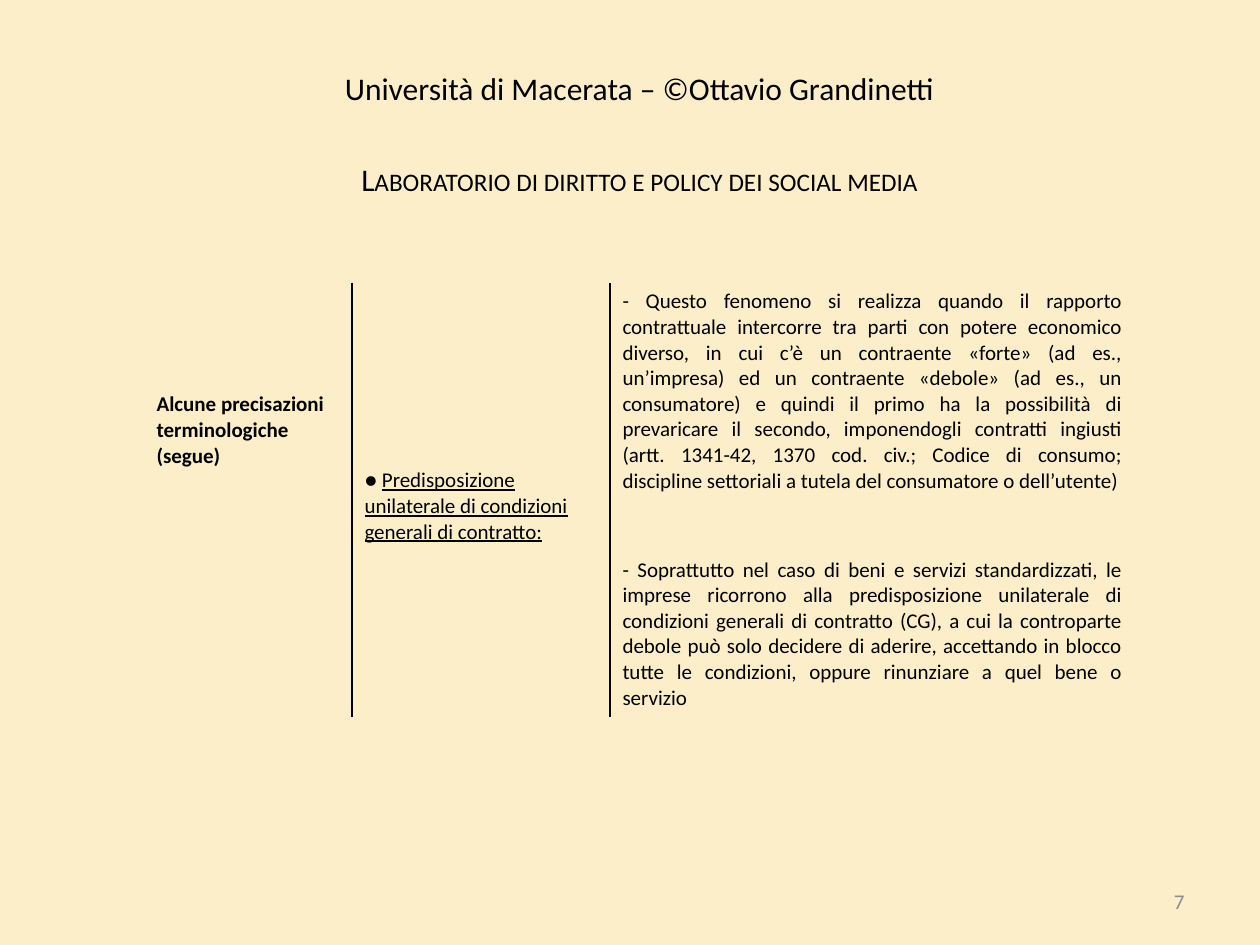
from lxml import etree
from pptx import Presentation
from pptx.dml.color import RGBColor
from pptx.enum.text import MSO_ANCHOR, PP_ALIGN
from pptx.oxml.ns import qn
from pptx.util import Emu, Pt

LEFT, MID, RIGHT, JUST = (PP_ALIGN.LEFT, PP_ALIGN.CENTER,
                          PP_ALIGN.RIGHT, PP_ALIGN.JUSTIFY)
PX = 914400 // 126
FONT = "Calibri"
COLORS = {"back": "FBEEC9", "text": "000000", "number": "8C8C8C"}
NO_STYLE = "{2D5ABB26-0587-4C30-8999-92F81FD0307C}"

ORIGIN = (144, 65)
COLS = [208, 258, 525]
ROWS = [52, 166, 217, 51, 166]
MERGES = [((0, 0), (0, 2)), ((1, 0), (1, 2)), ((2, 0), (4, 0)), ((2, 1), (4, 1))]

# row, column, paragraphs of (text, style) runs, size, alignment, top margin in px
CELLS = [
    (0, 0, [[("Università di Macerata – ©Ottavio Grandinetti", "")]], 18, MID, 6),
    (1, 0, [[("Laboratorio di diritto e policy dei social media", "small")]],
     18, MID, 45),
    (2, 0, [[("Alcune precisazioni terminologiche", "bold")],
            [("(segue)", "bold")]], 12, LEFT, 109),
    (2, 1, [[("● ", ""),
             ("Predisposizione unilaterale di condizioni generali di contratto:",
              "under")]], 12, LEFT, 185),
    (2, 2, [[("- Questo fenomeno si realizza quando il rapporto contrattuale "
              "intercorre tra parti con potere economico diverso, in cui c’è un "
              "contraente «forte» (ad es., un’impresa) ed un contraente «debole» "
              "(ad es., un consumatore) e quindi il primo ha la possibilità di "
              "prevaricare il secondo, imponendogli contratti ingiusti (artt. "
              "1341-42, 1370 cod. civ.; Codice di consumo; discipline settoriali "
              "a tutela del consumatore o dell’utente)", "")]], 12, JUST, 6),
    (4, 2, [[("- Soprattutto nel caso di beni e servizi standardizzati, le imprese "
              "ricorrono alla predisposizione unilaterale di condizioni generali di "
              "contratto (CG), a cui la controparte debole può solo decidere di "
              "aderire, accettando in blocco tutte le condizioni, oppure rinunziare "
              "a quel bene o servizio", "")]], 12, JUST, 6),
]


def px(n):
    return Emu(n * PX)


def write(frame, paras, size, align, color):
    for i, runs in enumerate(paras):
        para = frame.paragraphs[0] if i == 0 else frame.add_paragraph()
        para.alignment = align
        for text, style in runs:
            run = para.add_run()
            run.text = text
            font = run.font
            font.name, font.size = FONT, Pt(size)
            font.color.rgb = RGBColor.from_string(COLORS[color])
            font.bold = style == "bold"
            font.underline = style == "under"
            if style == "small":
                run._r.get_or_add_rPr().set("cap", "small")


def rule(cell, side):
    """Draw a black 1 pt border on one side of a cell."""
    line = etree.Element(qn("a:" + side), w=str(Pt(1)))
    fill = etree.SubElement(line, qn("a:solidFill"))
    etree.SubElement(fill, qn("a:srgbClr"), val=COLORS["text"])
    cell._tc.get_or_add_tcPr().insert(0, line)


def add_grid(slide):
    shape = slide.shapes.add_table(len(ROWS), len(COLS), *map(px, ORIGIN),
                                   px(sum(COLS)), px(sum(ROWS)))
    table = shape.table
    table.first_row = table.horz_banding = False
    table._tbl.tblPr.find(qn("a:tableStyleId")).text = NO_STYLE
    for col, width in zip(table.columns, COLS):
        col.width = px(width)
    for row, height in zip(table.rows, ROWS):
        row.height = px(height)
    for cell in table.iter_cells():
        cell.fill.background()
    for start, end in MERGES:
        table.cell(*start).merge(table.cell(*end))
    for row, col, paras, size, align, top in CELLS:
        cell = table.cell(row, col)
        cell.margin_top = px(top)
        write(cell.text_frame, paras, size, align, "text")
    for row in range(2, len(ROWS)):
        rule(table.cell(row, 0), "lnR")
        rule(table.cell(row, 1), "lnL")


def main():
    prs = Presentation()
    prs.slide_width, prs.slide_height = px(1260), px(945)
    slide = prs.slides.add_slide(prs.slide_layouts[6])
    back = slide.background.fill
    back.solid()
    back.fore_color.rgb = RGBColor.from_string(COLORS["back"])
    add_grid(slide)
    frame = slide.shapes.add_textbox(px(903), px(876), px(294), px(50)).text_frame
    frame.word_wrap = True
    frame.vertical_anchor = MSO_ANCHOR.MIDDLE
    write(frame, [[("7", "")]], 12, RIGHT, "number")
    prs.save("out.pptx")


if __name__ == "__main__":
    main()
